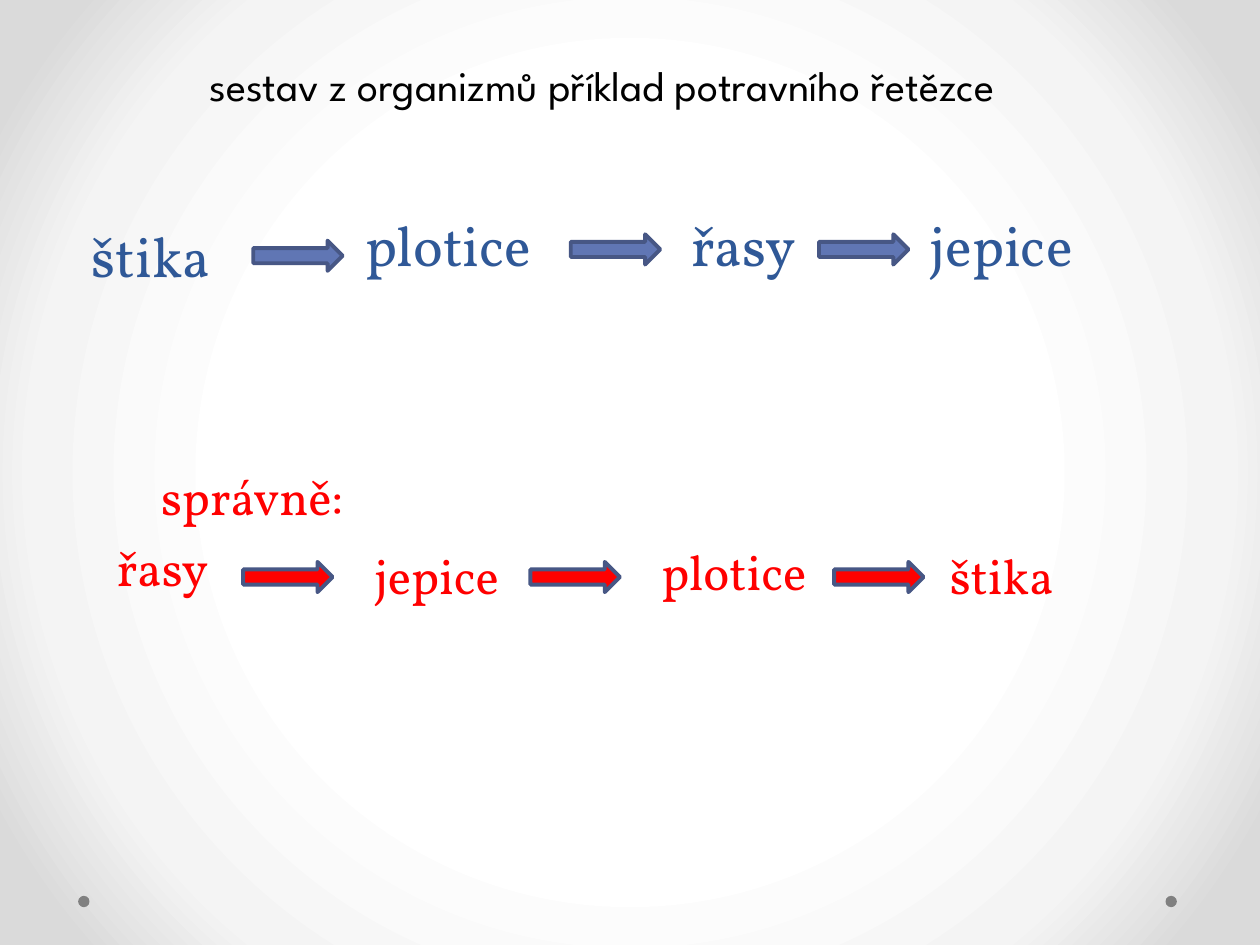
from dataclasses import dataclass

import pptx
import pptx.dml.color
import pptx.enum.shapes
import pptx.enum.text
import pptx.oxml
import pptx.oxml.ns
import pptx.util
from pptx.util import Inches

COLORS = {
    "title": "000000",
    "task": "2F5897",
    "task_arrow": "6076B4",
    "answer": "FF0000",
    "arrow_line": "475785",
    "dot": "808080",
}
BACKGROUND_STOPS = [(50, "FFFFFF"), (76, "F4F4F4"), (92, "DADADA")]
TITLE_FONT, WORD_FONT = "League Spartan", "Vollkorn"
SHAPES = pptx.enum.shapes.MSO_SHAPE


@dataclass
class Word:
    text: str
    left: float
    top: float
    width: float


@dataclass
class Chain:
    words: list[Word]
    arrows: list[tuple[float, float]]  # left, top
    size: int
    height: float
    text_color: str
    arrow_color: str


CHAINS = [
    Chain(
        [Word("štika", 0.63, 1.71, 1.15), Word("plotice", 2.8, 1.62, 1.54),
         Word("řasy", 5.39, 1.62, 1.04), Word("jepice", 7.28, 1.62, 1.34)],
        [(2.01, 1.91), (4.53, 1.86), (6.5, 1.86)],
        32, 0.64, "task", "task_arrow",
    ),
    Chain(
        [Word("správně:", 1.18, 3.65, 1.69),
         Word("řasy", 0.83, 4.22, 0.94), Word("jepice", 2.87, 4.28, 1.19),
         Word("plotice", 5.15, 4.25, 1.37), Word("štika", 7.44, 4.28, 1.03)],
        [(1.93, 4.46), (4.21, 4.46), (6.62, 4.46)],
        28, 0.57, "answer", "answer",
    ),
]


def rgb(name: str) -> pptx.dml.color.RGBColor:
    return pptx.dml.color.RGBColor.from_string(COLORS[name])


def format_run(r, font: str, size: int, color: str) -> None:
    r.font.name = font
    r.font.size = pptx.util.Pt(size)
    r.font.color.rgb = rgb(color)


def set_background(s) -> None:
    """Fill the slide with a gradient spreading in circles from its centre."""
    s.background.fill.gradient()
    old = s.element.find(".//" + pptx.oxml.ns.qn("a:gradFill"))
    stops = "".join(
        f'<a:gs pos="{pos * 1000}"><a:srgbClr val="{color}"/></a:gs>'
        for pos, color in BACKGROUND_STOPS
    )
    new = pptx.oxml.parse_xml(
        f'<a:gradFill {pptx.oxml.ns.nsdecls("a")} rotWithShape="1">'
        f'<a:gsLst>{stops}</a:gsLst><a:path path="circle">'
        '<a:fillToRect l="50000" t="50000" r="50000" b="50000"/>'
        "</a:path></a:gradFill>"
    )
    old.getparent().replace(old, new)


def add_title(s, text: str) -> None:
    sp = s.shapes.title
    sp.left, sp.top = Inches(0.28), Inches(0.36)
    sp.width, sp.height = Inches(9), Inches(0.63)
    tf = sp.text_frame
    tf.text = text
    tf.vertical_anchor = pptx.enum.text.MSO_ANCHOR.MIDDLE
    p = tf.paragraphs[0]
    p.alignment = pptx.enum.text.PP_ALIGN.CENTER
    format_run(p.runs[0], TITLE_FONT, 24, "title")


def add_filled_shape(s, kind, left: float, top: float, width: float,
                     height: float, color: str):
    sp = s.shapes.add_shape(kind, Inches(left), Inches(top),
                            Inches(width), Inches(height))
    sp.shadow.inherit = False
    sp.fill.solid()
    sp.fill.fore_color.rgb = rgb(color)
    sp.line.fill.background()
    return sp


def add_arrow(s, left: float, top: float, color: str) -> None:
    sp = add_filled_shape(s, SHAPES.RIGHT_ARROW, left, top, 0.71, 0.24, color)
    sp.line.color.rgb = rgb("arrow_line")
    sp.line.width = pptx.util.Pt(2.25)


def add_chain(s, chain: Chain) -> None:
    for word in chain.words:
        sp = s.shapes.add_textbox(Inches(word.left), Inches(word.top),
                                  Inches(word.width), Inches(chain.height))
        tf = sp.text_frame
        tf.text = word.text
        tf.word_wrap = False
        tf.auto_size = pptx.enum.text.MSO_AUTO_SIZE.SHAPE_TO_FIT_TEXT
        format_run(tf.paragraphs[0].runs[0], WORD_FONT, chain.size,
                   chain.text_color)
    for left, top in chain.arrows:
        add_arrow(s, left, top, chain.arrow_color)


def main() -> None:
    prs = pptx.Presentation()
    prs.slide_width, prs.slide_height = Inches(10), Inches(7.5)
    s = prs.slides.add_slide(prs.slide_layouts[5])
    set_background(s)
    for left in (0.62, 9.25):
        add_filled_shape(s, SHAPES.OVAL, left, 7.11, 0.09, 0.09, "dot")
    add_title(s, "sestav z organizmů příklad potravního řetězce")
    for chain in CHAINS:
        add_chain(s, chain)
    prs.save("out.pptx")


if __name__ == "__main__":
    main()
